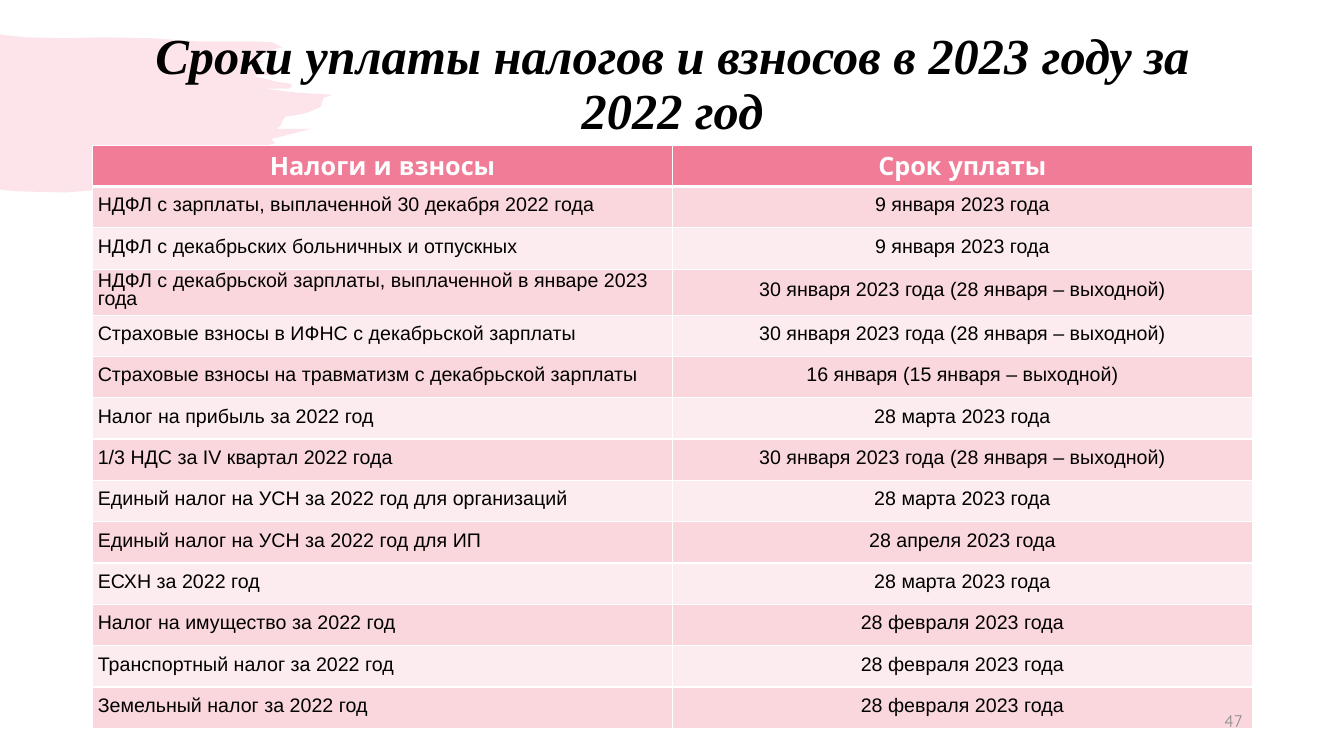
from dataclasses import dataclass

from lxml.etree import SubElement
from pptx import Presentation
from pptx.dml.color import RGBColor
from pptx.enum.text import MSO_ANCHOR, PP_ALIGN
from pptx.oxml import parse_xml
from pptx.oxml.ns import nsdecls, qn
from pptx.util import Pt

EMU_PER_PX = 9144  # 100 px to the inch


@dataclass(frozen=True)
class Theme:
    pink: str = "F07C98"
    band_dark: str = "F9D7DD"
    band_light: str = "FCECEF"
    white: str = "FFFFFF"
    black: str = "000000"
    grey: str = "8C8C8C"
    title_size: int = 36
    header_size: int = 18
    body_size: int = 14
    number_size: int = 12
    title_font: str = "Times New Roman"
    header_font: str = "Quicksand"
    body_font: str = "Arial"


BRUSH_STROKE = [
    (0, 34), (6, 35), (25, 37), (66, 38), (102, 37), (151, 38), (194, 41), (248, 41),
    (270, 42), (280, 47), (271, 49), (255, 54), (253, 57), (256, 59), (262, 62),
    (247, 62), (238, 66), (246, 68), (256, 70), (266, 71), (275, 74), (251, 75),
    (263, 78), (273, 81), (280, 82), (288, 83), (290, 85), (287, 88), (284, 88),
    (263, 88), (295, 92), (330, 94), (321, 97), (318, 106), (307, 111), (300, 113),
    (283, 116), (280, 120), (278, 125), (274, 128), (308, 128), (269, 138),
    (273, 142), (252, 148), (263, 148), (235, 160), (197, 172), (102, 188), (65, 191),
    (23, 190), (7, 189), (0, 188),
]

HEADINGS = ("Налоги и взносы", "Срок уплаты")
DEADLINES = [
    ("НДФЛ с зарплаты, выплаченной 30 декабря 2022 года", "9 января 2023 года"),
    ("НДФЛ с декабрьских больничных и отпускных", "9 января 2023 года"),
    ("НДФЛ с декабрьской зарплаты, выплаченной в январе 2023 года",
     "30 января 2023 года (28 января – выходной)"),
    ("Страховые взносы в ИФНС с декабрьской зарплаты",
     "30 января 2023 года (28 января – выходной)"),
    ("Страховые взносы на травматизм с декабрьской зарплаты",
     "16 января (15 января – выходной)"),
    ("Налог на прибыль за 2022 год", "28 марта 2023 года"),
    ("1/3 НДС за IV квартал 2022 года", "30 января 2023 года (28 января – выходной)"),
    ("Единый налог на УСН за 2022 год для организаций", "28 марта 2023 года"),
    ("Единый налог на УСН за 2022 год для ИП", "28 апреля 2023 года"),
    ("ЕСХН за 2022 год", "28 марта 2023 года"),
    ("Налог на имущество за 2022 год", "28 февраля 2023 года"),
    ("Транспортный налог за 2022 год", "28 февраля 2023 года"),
    ("Земельный налог за 2022 год", "28 февраля 2023 года"),
]


def px(*lengths):
    return [length * EMU_PER_PX for length in lengths]


def apply_format(target, values):
    for attribute, value in values.items():
        setattr(target, attribute, value)


class SlideBuilder:
    def __init__(self, slide, theme):
        self.slide = slide
        self.theme = theme

    def brush(self, points, color, opacity):
        builder = self.slide.shapes.build_freeform(*points[0], scale=EMU_PER_PX)
        builder.add_line_segments(points[1:], close=True)
        stroke = builder.convert_to_shape()
        stroke.shadow.inherit = False
        stroke.line.fill.background()
        stroke.fill.solid()
        stroke.fill.fore_color.rgb = RGBColor.from_string(color)
        solid_color = stroke.element.spPr.find(f".//{qn('a:srgbClr')}")
        SubElement(solid_color, qn("a:alpha")).set("val", str(opacity * 1000))

    def set_wording(self, frame, wording, color, font, paragraph):
        line = frame.paragraphs[0]
        apply_format(line, paragraph)
        run = line.add_run()
        run.text = wording
        apply_format(run.font, font)
        run.font.color.rgb = RGBColor.from_string(color)

    def text(self, box, wording, color, font, paragraph):
        frame = self.slide.shapes.add_textbox(*px(*box)).text_frame
        apply_format(frame, {"word_wrap": True, "vertical_anchor": MSO_ANCHOR.MIDDLE})
        self.set_wording(frame, wording, color, font, paragraph)

    def borders(self, cell, top, bottom):
        """Draw white cell edges; top and bottom are widths in points."""
        widths = {"lnL": 1, "lnR": 1, "lnT": top, "lnB": bottom}
        properties = cell._tc.get_or_add_tcPr()
        for position, (edge, width) in enumerate(widths.items()):
            properties.insert(position, parse_xml(
                f'<a:{edge} {nsdecls("a")} w="{Pt(width)}"><a:solidFill>'
                f'<a:srgbClr val="{self.theme.white}"/></a:solidFill></a:{edge}>'))

    def fill_cell(self, cell, color):
        cell.fill.solid()
        cell.fill.fore_color.rgb = RGBColor.from_string(color)

    def table(self, box, headings, rows):
        theme = self.theme
        grid = self.slide.shapes.add_table(
            len(rows) + 1, len(headings), *px(*box)).table
        grid.horz_banding = False
        header_font = {"size": Pt(theme.header_size), "name": theme.header_font,
                       "bold": True}
        body_font = {"size": Pt(theme.body_size), "name": theme.body_font,
                     "bold": False}
        margins = dict.fromkeys(
            ("margin_left", "margin_top", "margin_right", "margin_bottom"), px(5)[0])
        body_cell = {"vertical_anchor": MSO_ANCHOR.MIDDLE, **margins}
        alignments = (PP_ALIGN.LEFT, PP_ALIGN.CENTER)

        for column, heading in enumerate(headings):
            cell = grid.cell(0, column)
            self.set_wording(cell.text_frame, heading, theme.white, header_font,
                             {"alignment": PP_ALIGN.CENTER})
            self.fill_cell(cell, theme.pink)
            self.borders(cell, top=1, bottom=3)

        for number, row in enumerate(rows, start=1):
            band = theme.band_dark if number % 2 else theme.band_light
            for column, wording in enumerate(row):
                cell = grid.cell(number, column)
                apply_format(cell, body_cell)
                self.set_wording(cell.text_frame, wording, theme.black, body_font,
                                 {"alignment": alignments[column],
                                  "line_spacing": Pt(12.8), "space_after": Pt(8)})
                self.fill_cell(cell, band)
                self.borders(cell, top=3 if number == 1 else 1, bottom=1)


def main():
    theme = Theme()
    deck = Presentation()
    deck.slide_width, deck.slide_height = px(1333, 750)
    builder = SlideBuilder(deck.slides.add_slide(deck.slide_layouts[6]), theme)

    builder.brush(BRUSH_STROKE, theme.pink, opacity=20)
    builder.text(
        (92, 26, 1150, 118), "Сроки уплаты налогов и взносов в 2023 году за 2022 год",
        theme.black,
        {"size": Pt(theme.title_size), "name": theme.title_font,
         "bold": True, "italic": True},
        {"alignment": PP_ALIGN.CENTER, "line_spacing": 0.9})
    builder.table((92, 144, 1150, 574), HEADINGS, DEADLINES)
    builder.text(
        (942, 695, 300, 40), "47", theme.grey,
        {"size": Pt(theme.number_size), "name": theme.header_font},
        {"alignment": PP_ALIGN.RIGHT})
    deck.save("out.pptx")


if __name__ == "__main__":
    main()
